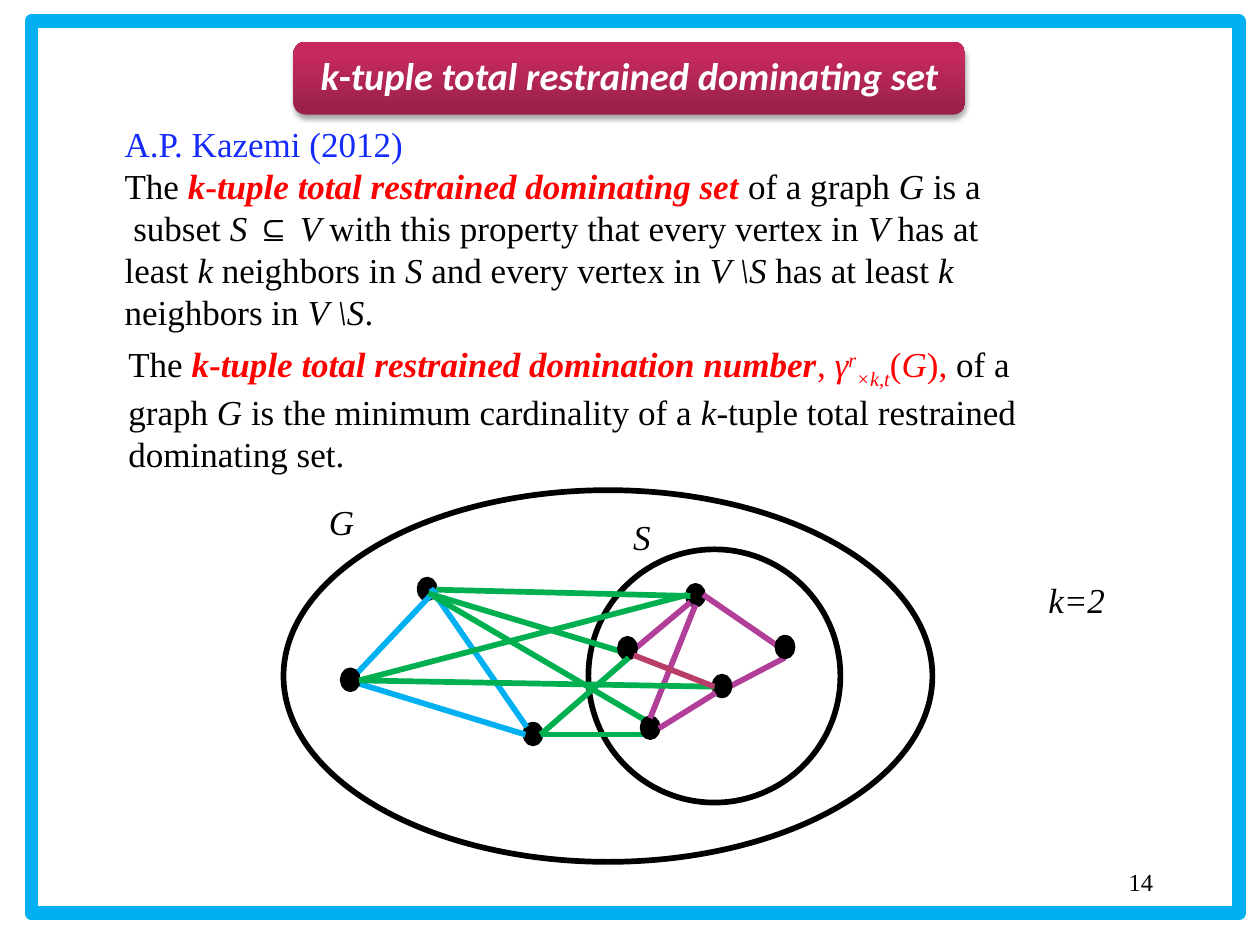
from copy import deepcopy

from lxml import etree
from pptx import Presentation
from pptx.dml.color import RGBColor
from pptx.enum.shapes import MSO_CONNECTOR, MSO_SHAPE
from pptx.enum.text import MSO_ANCHOR, MSO_AUTO_SIZE, PP_ALIGN
from pptx.oxml.ns import qn
from pptx.util import Inches, Pt

RECTANGLE, ROUNDED, OVAL = MSO_SHAPE.RECTANGLE, MSO_SHAPE.ROUNDED_RECTANGLE, MSO_SHAPE.OVAL
STRAIGHT = MSO_CONNECTOR.STRAIGHT
LEFT, CENTER, RIGHT = PP_ALIGN.LEFT, PP_ALIGN.CENTER, PP_ALIGN.RIGHT
TITLE_ONLY = 5
COLORS = {
    "black": "000000", "white": "FFFFFF", "red": "FF0000", "author": "152BF9",
    "blue": "00B0F0", "green": "00B050", "purple": "B13F9A", "rose": "B83D68",
}
TITLE_STOPS = [(0, "972049"), (0.8, "C4295F"), (1, "C8265F")]
SERIF = "Times New Roman"
LINE_WIDTH = 3.25
VERTEX_SIZE = (0.12, 0.15)

ITALIC = {"italic": True}
RED = {"color": "red"}
TERM = {"color": "red", "bold": True}
ITALIC_RED = {**RED, **ITALIC}
ITALIC_TERM = {**TERM, **ITALIC}

DEFINITION = [
    [("A.P. Kazemi (2012)", {"color": "author"})],
    [("The ", {}), ("k", ITALIC_TERM), ("-", TERM),
     ("tuple total restrained dominating set ", ITALIC_TERM),
     ("of a graph ", {}), ("G ", ITALIC), ("is a", {})],
    [(" subset ", {}), ("S ⊆ V ", ITALIC),
     ("with this property that every vertex in ", {}), ("V ", ITALIC), ("has at", {})],
    [("least ", {}), ("k ", ITALIC), ("neighbors in ", {}), ("S ", ITALIC),
     ("and every vertex in ", {}), ("V \\S ", ITALIC), ("has at least ", {}),
     ("k ", ITALIC), ("neighbors in ", {}), ("V \\S", ITALIC), (".", {})],
]
NUMBER = [
    [("The ", {}), ("k", ITALIC_TERM), ("-", TERM),
     ("tuple total restrained domination number", ITALIC_TERM), (", ", RED),
     ("γ", ITALIC_RED), ("r", {**ITALIC_RED, "baseline": 30}),
     ("×k,t", {**ITALIC_RED, "baseline": -25}), ("(", RED), ("G", ITALIC_RED),
     ("), ", RED), ("of a graph ", {}), ("G ", ITALIC),
     ("is the minimum cardinality of a ", {}), ("k", ITALIC),
     ("-tuple total restrained dominating set.", {})],
]

# Vertices and edges are measured from the corner of the graph, in layers from back to front.
BACK_VERTICES = [(1.08, 0.71), (3.21, 0.76), (1.92, 1.86)]
BACK_EDGES = [
    ("green", (1.21, 0.79), (3.23, 0.84)),
    ("blue", (1.17, 0.78), (1.93, 1.88)),
    ("purple", (3.33, 0.83), (4.0, 1.29)),
    ("green", (1.17, 0.83), (2.98, 1.89)),
    ("blue", (0.53, 1.51), (1.21, 0.79)),
    ("blue", (0.58, 1.53), (1.92, 1.94)),
    ("purple", (3.23, 0.89), (2.8, 1.25)),
    ("green", (1.15, 0.82), (2.78, 1.31)),
    ("green", (2.04, 1.94), (2.87, 1.94)),
    ("purple", (3.98, 1.33), (3.54, 1.56)),
]
FRONT_VERTICES = [(2.67, 1.18), (0.47, 1.43), (2.85, 1.81), (3.92, 1.17), (3.42, 1.48)]
FRONT_EDGES = [
    ("purple", (3.43, 1.61), (2.98, 1.89)),
    ("green", (2.04, 1.94), (2.74, 1.33)),
    ("purple", (3.27, 0.91), (2.91, 1.81)),
    ("green", (0.6, 1.51), (3.42, 1.56)),
    ("green", (0.6, 1.51), (3.21, 0.83)),
    ("rose", (3.42, 1.56), (2.78, 1.31)),
]


def rgb(name):
    return RGBColor.from_string(COLORS[name])


def inches(values):
    return [Inches(value) for value in values]


def write(frame, paragraphs, size=20, font=SERIF, color="black", align=LEFT):
    """Fill a text frame with paragraphs of (text, format) spans."""
    frame.word_wrap = True
    for index, spans in enumerate(paragraphs):
        para = frame.paragraphs[0] if index == 0 else frame.add_paragraph()
        para.alignment = align
        for text, style in spans:
            span = para.add_run()
            span.text = text
            span.font.size = Pt(size)
            span.font.name = font
            span.font.bold = style.get("bold", False)
            span.font.italic = style.get("italic", False)
            span.font.color.rgb = rgb(style.get("color", color))
            if "baseline" in style:
                span.font._element.set("baseline", str(style["baseline"] * 1000))


def add_text(page, box, paragraphs, **style):
    write(page.shapes.add_textbox(*inches(box)).text_frame, paragraphs, **style)


def add_outline(page, kind, box, color="black", width=LINE_WIDTH, fill=None):
    shape = page.shapes.add_shape(kind, *inches(box))
    shape.shadow.inherit = False
    if fill:
        shape.fill.solid()
        shape.fill.fore_color.rgb = rgb(fill)
    else:
        shape.fill.background()
    shape.line.color.rgb = rgb(color)
    shape.line.width = Pt(width)


def add_title(page, box):
    plate = page.shapes.add_shape(ROUNDED, *inches(box))
    plate.line.fill.background()
    plate.fill.gradient()
    plate.fill.gradient_angle = 90
    properties = plate._element.spPr
    stop_list = properties.find(".//" + qn("a:gsLst"))
    stop_list.insert(1, deepcopy(stop_list[0]))
    for stop, (position, color) in zip(plate.fill.gradient_stops, TITLE_STOPS):
        stop.position = position
        stop.color.rgb = RGBColor.from_string(color)

    plate.shadow.inherit = False
    shadow = etree.SubElement(
        properties.find(qn("a:effectLst")), qn("a:outerShdw"),
        blurRad=str(Pt(3.1)), dist=str(Pt(1.8)), dir="5400000", rotWithShape="0")
    shade = etree.SubElement(shadow, qn("a:srgbClr"), val=COLORS["black"])
    etree.SubElement(shade, qn("a:alpha"), val="35000")

    title = page.shapes.title
    title.left, title.top, title.width, title.height = inches(box)
    plate._element.addnext(title._element)
    frame = title.text_frame
    frame.auto_size = MSO_AUTO_SIZE.NONE
    frame.vertical_anchor = MSO_ANCHOR.MIDDLE
    write(frame, [[("k", ITALIC), ("-", {}),
                   ("tuple total restrained dominating set", ITALIC)]],
          size=22, font="Calibri", color="white", align=CENTER)
    frame.paragraphs[0].line_spacing = 0.9
    for span in frame.paragraphs[0].runs:
        span.font.bold = True


def add_graph(page, box):
    """Draw the set G, its subset S, and the vertices and edges."""
    left, top = box[:2]

    def place(x, y, *size):
        return (left + x, top + y, *size)

    def add_vertices(corners):
        for corner in corners:
            add_outline(page, OVAL, place(*corner, *VERTEX_SIZE), fill="black")

    def add_edges(edges):
        for color, start, end in edges:
            edge = page.shapes.add_connector(
                STRAIGHT, *inches(place(*start) + place(*end)))
            edge.line.color.rgb = rgb(color)
            edge.line.width = Pt(LINE_WIDTH)
            etree.SubElement(edge._element.spPr, qn("a:effectLst"))

    add_outline(page, OVAL, box)
    add_outline(page, OVAL, place(2.42, 0.47, 2, 2.01))
    add_text(page, place(0.17, 0.03, 0.58, 0.44), [[("G", ITALIC)]], align=CENTER)
    add_text(page, place(2.51, 0.15, 0.67, 0.44), [[("S", ITALIC)]], align=CENTER)
    add_vertices(BACK_VERTICES)
    add_edges(BACK_EDGES)
    add_vertices(FRONT_VERTICES)
    add_edges(FRONT_EDGES)


def main():
    deck = Presentation()
    deck.slide_width, deck.slide_height = inches((10, 7.5))
    page = deck.slides.add_slide(deck.slide_layouts[TITLE_ONLY])
    add_outline(page, RECTANGLE, (0.25, 0.17, 9.58, 7.08), color="blue", width=8)
    add_text(page, (7.17, 6.83, 2.08, 0.5), [[("14", {})]], size=14, align=RIGHT)
    add_title(page, (2.33, 0.33, 5.33, 0.58))
    add_text(page, (0.89, 0.92, 7.75, 1.78), DEFINITION)
    add_text(page, (0.92, 2.67, 7.75, 1.11), NUMBER)
    add_graph(page, (2.25, 3.89, 5.15, 2.95))
    add_text(page, (8.17, 4.54, 0.75, 0.44), [[("k=2", ITALIC)]], align=CENTER)
    deck.save("out.pptx")


if __name__ == "__main__":
    main()
